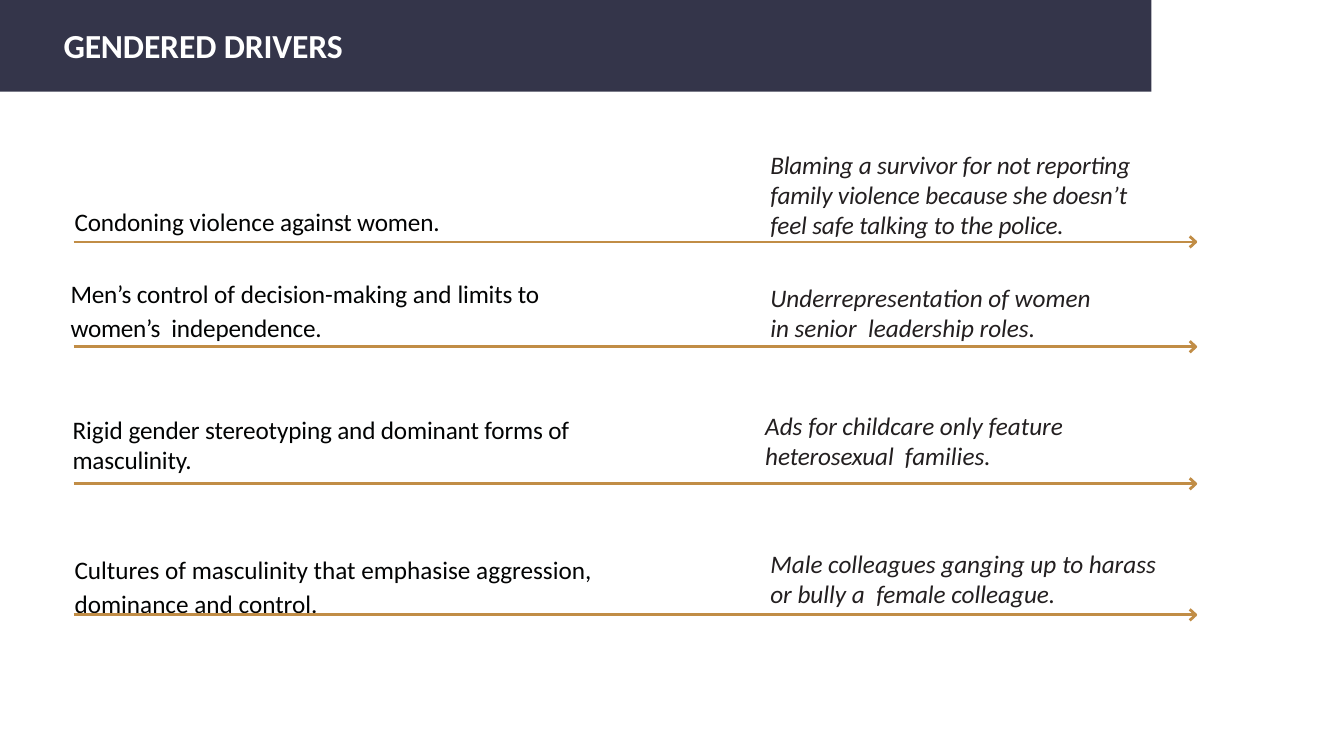
import pptx
import pptx.dml.color
import pptx.enum.shapes
import pptx.enum.text
import pptx.oxml.ns
import pptx.util
from lxml import etree
from pptx.util import Inches

TITLE = [("GENDERED DRIVERS", -0.1)]

DRIVERS = [
    {"box": (0.73, 2.04, 5.6, 0.31), "leading": 1,
     "runs": [("Condoning ", -0.1), ("violence", 0), (" against women.", -0.1)]},
    {"box": (0.69, 2.72, 5.49, 0.66), "leading": 1.11,
     "runs": [("Men’s", -0.2), (" control ", -0.1), ("of decision-making and ", 0),
              ("limits to ", -0.1), ("women’s  ", -0.2), ("independence.", -0.1)]},
    {"box": (0.71, 4.1, 5.46, 0.62), "leading": 1,
     "runs": [("Rigid ", 0),
              ("gender stereotyping and dominant forms of masculinity.", -0.1)]},
    {"box": (0.73, 5.46, 5.42, 0.67), "leading": 1.11,
     "runs": [("Cultures of masculinity that emphasise aggression, "
               "dominance and control.", 0)]},
]

EXAMPLES = [
    {"box": (7.63, 1.47, 3.72, 0.92),
     "runs": [("Blaming a survivor for not reporting family violence because "
               "she doesn’t feel safe talking to the police.", -0.1)]},
    {"box": (7.63, 2.79, 3.39, 0.62),
     "runs": [("Underrepresentation of women in senior  leadership roles.", 0)]},
    {"box": (7.58, 4.06, 4.12, 0.62),
     "runs": [("Ads ", 0), ("for ", -0.1), ("childcare only feature ", 0),
              ("heterosexual  ", -0.1), ("families.", 0)]},
    {"box": (7.63, 5.43, 3.99, 0.62),
     "runs": [("Male colleagues ganging up ", 0), ("to ", -0.1),
              ("harass or bully a  ", 0), ("female", -0.1), (" colleague.", 0)]},
]

ARROW_HEIGHTS = [2.4, 3.44, 4.8, 6.1]
ARROW_LEFT, ARROW_RIGHT = 0.73, 11.86
TIP_LENGTH, TIP_HALF = 0.06, 0.055

THEME = {
    "font": "Calibri",
    "band": "34354A",
    "arrow": "C18D46",
    "arrow_width": 2,
    "title": {"size": 24, "color": "FFFFFF", "bold": True, "italic": False},
    "driver": {"size": 18, "color": "020303", "bold": False, "italic": False},
    "example": {"size": 18, "color": "231F20", "bold": False, "italic": True},
}


def color(name):
    return pptx.dml.color.RGBColor.from_string(name)


def add_text(page, place, runs, style, leading=1):
    box = page.shapes.add_textbox(*map(Inches, place))
    frame = box.text_frame
    frame.word_wrap = True
    frame.auto_size = pptx.enum.text.MSO_AUTO_SIZE.NONE
    frame.margin_left = frame.margin_right = frame.margin_bottom = 0
    frame.margin_top = Inches(0.01)
    para = frame.paragraphs[0]
    para.space_before = pptx.util.Pt(0.8)
    para.line_spacing = float(leading)
    para._p.get_or_add_pPr().set("marL", str(Inches(0.01)))
    for text, spacing in runs:
        span = para.add_run()
        span.text = text
        span.font.name = THEME["font"]
        span.font.size = pptx.util.Pt(style["size"])
        span.font.bold = style["bold"]
        span.font.italic = style["italic"]
        span.font.color.rgb = color(style["color"])
        span._r.get_or_add_rPr().set("spc", str(round(spacing * 100)))


def style_line(shape):
    shape.line.color.rgb = color(THEME["arrow"])
    shape.line.width = pptx.util.Pt(THEME["arrow_width"])


def add_arrow(page, height):
    shaft = page.shapes.add_connector(
        pptx.enum.shapes.MSO_CONNECTOR.STRAIGHT,
        Inches(ARROW_LEFT), Inches(height), Inches(ARROW_RIGHT), Inches(height))
    style_line(shaft)
    etree.SubElement(shaft._element.spPr, pptx.oxml.ns.qn("a:effectLst"))
    back = Inches(ARROW_RIGHT - TIP_LENGTH)
    outline = page.shapes.build_freeform(back, Inches(height - TIP_HALF))
    outline.add_line_segments(
        [(Inches(ARROW_RIGHT), Inches(height)), (back, Inches(height + TIP_HALF))],
        close=False)
    tip = outline.convert_to_shape()
    tip.shadow.inherit = False
    tip.fill.background()
    style_line(tip)


def main():
    deck = pptx.Presentation()
    deck.slide_width, deck.slide_height = Inches(13.33), Inches(7.5)
    page = deck.slides.add_slide(deck.slide_layouts[6])

    band = page.shapes.add_shape(
        pptx.enum.shapes.MSO_SHAPE.RECTANGLE, 0, 0, Inches(11.42), Inches(0.91))
    band.shadow.inherit = False
    band.fill.solid()
    band.fill.fore_color.rgb = color(THEME["band"])
    band.line.fill.background()
    add_text(page, (0.62, 0.24, 10.19, 0.44), TITLE, THEME["title"])

    for driver, example, height in zip(DRIVERS, EXAMPLES, ARROW_HEIGHTS):
        add_text(page, driver["box"], driver["runs"], THEME["driver"], driver["leading"])
        add_text(page, example["box"], example["runs"], THEME["example"])
        add_arrow(page, height)

    deck.save("out.pptx")


if __name__ == "__main__":
    main()
